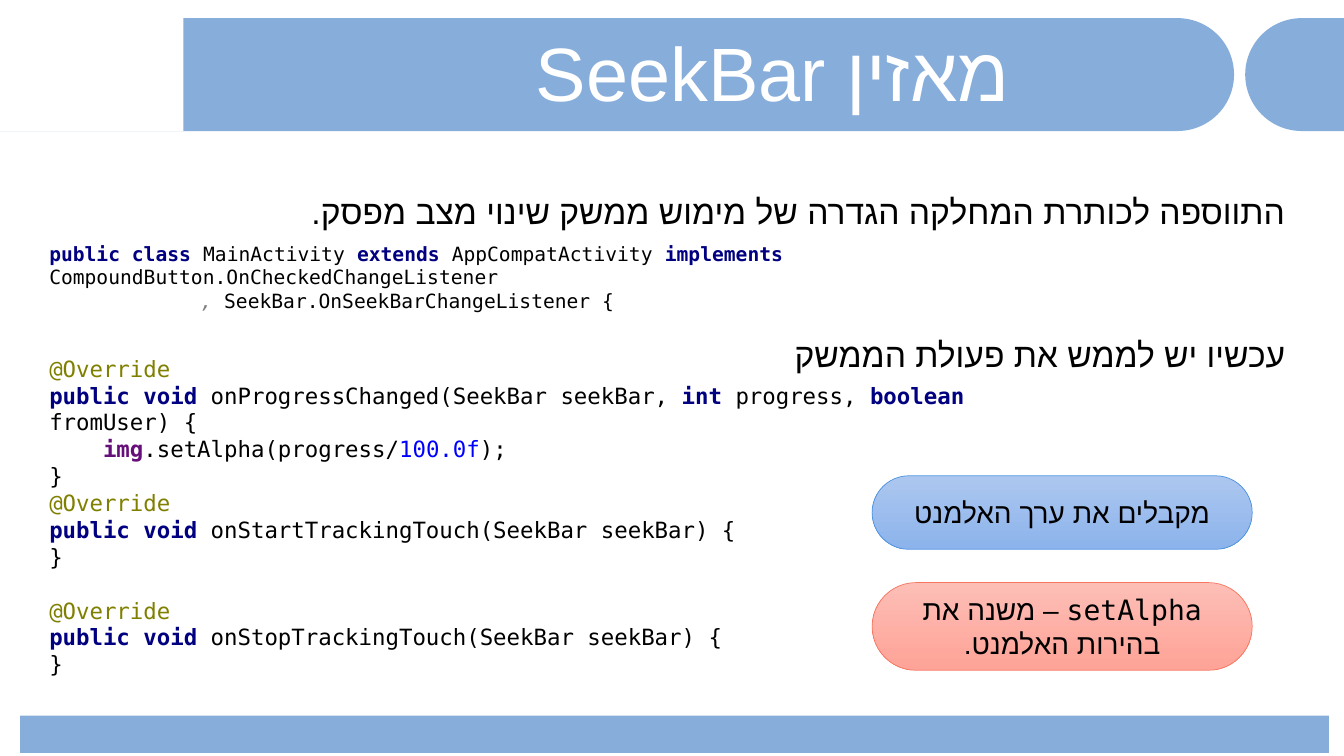
from dataclasses import dataclass
from math import cos, pi, sin

from lxml.etree import SubElement
from pptx import Presentation
from pptx.dml.color import RGBColor as Rgb
from pptx.enum.shapes import MSO_SHAPE as Shape
from pptx.enum.text import MSO_ANCHOR as Anchor, PP_ALIGN as Align
from pptx.oxml.ns import qn
from pptx.util import Inches, Pt


@dataclass(frozen=True)
class Theme:
    band: str = "87ADDB"
    white: str = "FFFFFF"
    black: str = "000000"
    keyword: str = "000080"
    annotation: str = "808000"
    field: str = "660E7A"
    number: str = "0000FF"
    comma: str = "808080"
    blue: tuple = ("ACC7EF", "8CB3EC", "4C93DF")
    red: tuple = ("FDBEB6", "FEA397", "F77660")
    sans: str = "Arial"
    mono: str = "DejaVu Sans Mono"
    title_size: int = 54
    heading_size: int = 24
    callout_size: int = 20
    method_size: int = 16
    class_size: int = 14


class SlideBuilder:
    def __init__(self, slide, theme):
        self.shapes = slide.shapes
        self.theme = theme

    def paint(self, shape, color):
        shape.shadow.inherit = False
        shape.fill.solid()
        shape.fill.fore_color.rgb = Rgb.from_string(color)
        shape.line.fill.background()

    def block(self, box, color):
        rectangle = self.shapes.add_shape(Shape.RECTANGLE, *map(Inches, box))
        self.paint(rectangle, color)
        return rectangle

    def half_pill(self, flat_x, tip_x, top, height):
        radius = height / 2
        side = 1 if tip_x > flat_x else -1
        center = tip_x - side * radius
        angles = [pi * step / 48 - pi / 2 for step in range(49)]
        arc = [(Inches(center + side * radius * cos(angle)),
                Inches(top + radius + radius * sin(angle))) for angle in angles]
        outline = self.shapes.build_freeform(Inches(flat_x), Inches(top))
        outline.add_line_segments(arc + [(Inches(flat_x), Inches(top + height))])
        self.paint(outline.convert_to_shape(), self.theme.band)

    def hebrew(self, frame, text, align, size, font, color):
        frame.word_wrap = True
        paragraph = frame.paragraphs[0]
        paragraph.add_run().text = text
        paragraph.alignment = align
        paragraph.font.size = Pt(size)
        paragraph.font.name = font
        paragraph.font.color.rgb = Rgb.from_string(color)
        properties = paragraph.font._element
        SubElement(properties, qn("a:cs"), typeface=self.theme.sans)
        properties.getparent().set("rtl", "1")
        return paragraph

    def title(self, box, text):
        frame = self.shapes.add_textbox(*map(Inches, box)).text_frame
        frame.vertical_anchor = Anchor.MIDDLE
        paragraph = self.hebrew(frame, text, Align.CENTER, self.theme.title_size,
                                self.theme.sans, self.theme.white)
        paragraph.line_spacing = 0.9
        paragraph.space_before = Pt(10)

    def heading(self, top, text):
        box = (2.18, top, 10.57, 0.4)
        frame = self.shapes.add_textbox(*map(Inches, box)).text_frame
        frame.margin_left = frame.margin_right = 0
        frame.margin_top = frame.margin_bottom = 0
        self.hebrew(frame, text, Align.RIGHT, self.theme.heading_size,
                    self.theme.sans, self.theme.black)

    def callout(self, top, height, text, colors):
        box = (8.65, top, 3.77, height)
        pill = self.shapes.add_shape(Shape.ROUNDED_RECTANGLE, *map(Inches, box))
        pill.adjustments[0] = 0.5
        pill.shadow.inherit = False
        start, end, edge = colors
        pill.fill.gradient()
        pill.fill.gradient_angle = 270
        for stop, color in zip(pill.fill.gradient_stops, (start, end)):
            stop.color.rgb = Rgb.from_string(color)
        pill.line.color.rgb = Rgb.from_string(edge)
        pill.line.width = Pt(0.5)
        pill.text_frame.vertical_anchor = Anchor.MIDDLE
        self.hebrew(pill.text_frame, text, Align.CENTER, self.theme.callout_size,
                    self.theme.mono, self.theme.black)

    def code(self, box, size, paragraphs):
        frame = self.block(box, self.theme.white).text_frame
        frame.word_wrap = True
        frame.vertical_anchor = Anchor.MIDDLE
        for index, tokens in enumerate(paragraphs):
            paragraph = frame.add_paragraph() if index else frame.paragraphs[0]
            paragraph.alignment = Align.LEFT
            paragraph.font.size = Pt(size)
            paragraph.font.name = self.theme.mono
            for text, color in tokens:
                self.token(paragraph, text, color)

    def token(self, paragraph, text, color):
        for index, line in enumerate(text.split("\n")):
            if index:
                paragraph.add_line_break()
            if line:
                run = paragraph.add_run()
                run.text = line
                run.font.color.rgb = Rgb.from_string(color)
                run.font.bold = color in (self.theme.keyword, self.theme.field)
                run.font.italic = color == self.theme.comma


def main():
    theme = Theme()
    presentation = Presentation()
    presentation.slide_width = Inches(13.33)
    presentation.slide_height = Inches(7.5)
    slide = presentation.slides.add_slide(presentation.slide_layouts[6])
    page = SlideBuilder(slide, theme)

    page.half_pill(0, 12.24, 0.18, 1.12)
    page.block((0, 0.18, 1.82, 1.12), theme.white)
    page.half_pill(13.33, 12.35, 0.18, 1.12)
    page.block((0.2, 7.1, 12.98, 0.37), theme.band)
    page.title((2.32, 0.37, 10.69, 0.79), "מאזין SeekBar")

    page.heading(1.89, "התווספה לכותרת המחלקה הגדרה של מימוש ממשק שינוי מצב מפסק.")
    page.code((0.39, 2.46, 11.18, 0.81), theme.class_size, [
        [("public class ", theme.keyword),
         ("MainActivity ", theme.black),
         ("extends ", theme.keyword),
         ("AppCompatActivity ", theme.black),
         ("implements ", theme.keyword),
         ("CompoundButton.OnCheckedChangeListener", theme.black)],
        [("\t\t\t, ", theme.comma),
         ("SeekBar.OnSeekBarChangeListener {\n", theme.black)],
    ])

    override = [("@Override\n", theme.annotation), ("public void ", theme.keyword)]
    page.code((0.39, 3.59, 10.02, 3.06), theme.method_size, [
        [*override,
         ("onProgressChanged(SeekBar seekBar, ", theme.black),
         ("int ", theme.keyword),
         ("progress, ", theme.black),
         ("boolean ", theme.keyword),
         ("fromUser) {\n    ", theme.black),
         ("img", theme.field),
         (".setAlpha(progress/", theme.black),
         ("100.0f", theme.number),
         (");\n}\n", theme.black),
         *override,
         ("onStartTrackingTouch(SeekBar seekBar) {\n}\n\n", theme.black),
         *override,
         ("onStopTrackingTouch(SeekBar seekBar) {\n}", theme.black)],
    ])

    page.callout(4.72, 0.73, "מקבלים את ערך האלמנט", theme.blue)
    page.heading(3.31, "עכשיו יש לממש את פעולת הממשק")
    page.callout(5.78, 0.87, "setAlpha – משנה את בהירות האלמנט.", theme.red)

    presentation.save("out.pptx")


if __name__ == "__main__":
    main()
